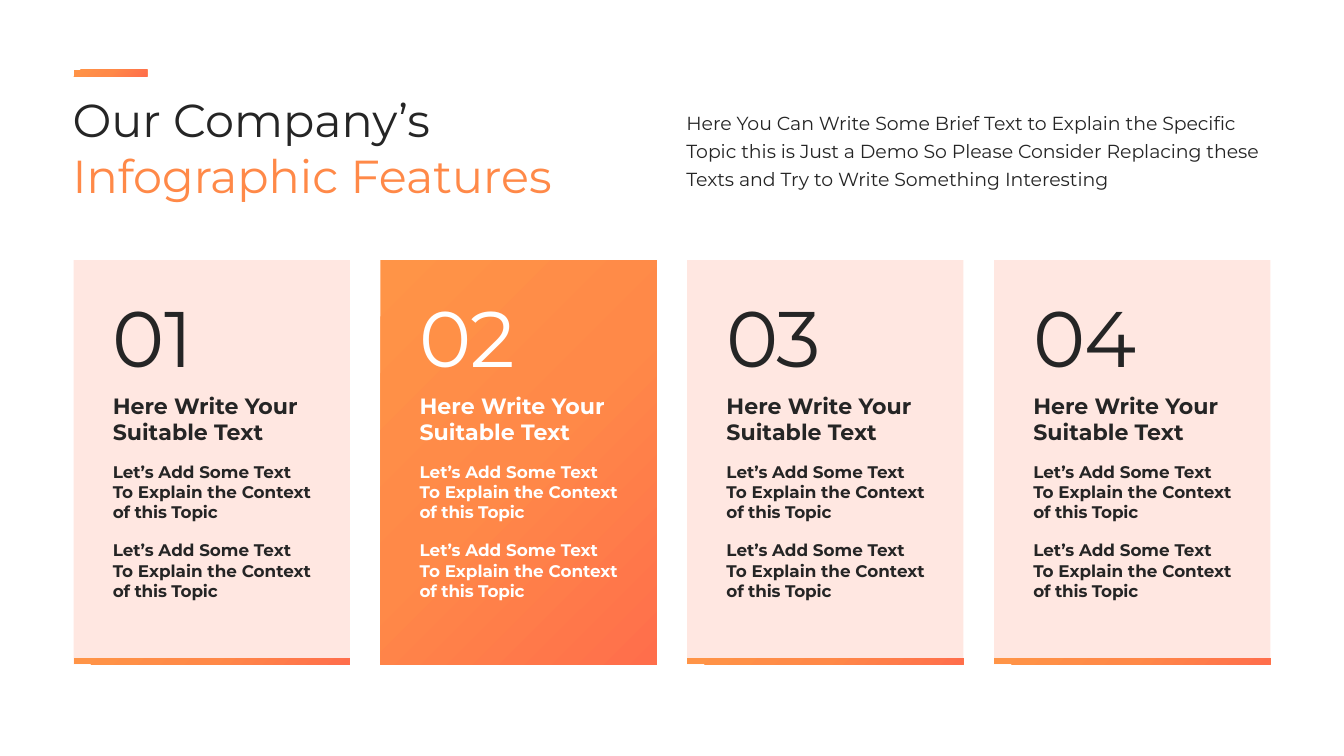
from copy import deepcopy
from pptx import Presentation
from pptx.dml.color import RGBColor
from pptx.enum.shapes import MSO_SHAPE
from pptx.enum.text import MSO_ANCHOR, MSO_AUTO_SIZE, PP_ALIGN
from pptx.oxml.ns import qn
from pptx.util import Inches, Pt

TITLE = ["Our Company’s", "Infographic Features"]
BRIEF = ["Here You Can Write Some Brief Text to Explain the Specific Topic "
         "this is Just a Demo So Please Consider Replacing these Texts and "
         "Try to Write Something Interesting"]
HEAD = ["Here Write Your", "Suitable Text"]
NOTE = ["Let’s Add Some Text", "To Explain the Context", "of this Topic"]
CARDS = [("01", 1.05), ("02", 1.2), ("03", 1.2), ("04", 1.27)]
ACTIVE = "02"
WARM = ["FF9447", "FF8948", "FF6E4B"]
DARK, WHITE, PINK = "252525", "FFFFFF", "FFE7E1"
FONT = "Montserrat"

LEFT, LAST, TOP = 0.73, 9.86, 2.58
WIDE, HIGH, BAR = 2.74, 4.01, 0.06
INSET = 0.29
STEP = (LAST - LEFT) / (len(CARDS) - 1)


def color(code):
    return RGBColor.from_string(code)


def blend(fill, node):
    fill.gradient()
    fill.gradient_angle = 315
    stops = node.find(".//" + qn("a:gsLst"))
    stops.insert(1, deepcopy(stops[0]))
    for i, (stop, code) in enumerate(zip(fill.gradient_stops, WARM)):
        stop.position = i / 2
        stop.color.rgb = color(code)


def block(x, y, w, h, code=None):
    shape = slide.shapes.add_shape(
        MSO_SHAPE.RECTANGLE, Inches(x), Inches(y), Inches(w), Inches(h))
    shape.shadow.inherit = False
    shape.line.fill.background()
    if code:
        shape.fill.solid()
        shape.fill.fore_color.rgb = color(code)
    else:
        blend(shape.fill, shape._element)


def write(box, lines, size, code, bold=False, wrap=False):
    frame = box.text_frame
    frame.text = "\n".join(lines)
    frame.word_wrap = wrap
    frame.auto_size = MSO_AUTO_SIZE.SHAPE_TO_FIT_TEXT
    frame.vertical_anchor = MSO_ANCHOR.TOP
    for para in frame.paragraphs:
        para.alignment = PP_ALIGN.LEFT
        font = para.runs[0].font
        font.name, font.size, font.bold = FONT, Pt(size), bold
        font.color.rgb = color(code)
    return frame.paragraphs


def label(x, y, w, h, *args, **opts):
    box = slide.shapes.add_textbox(Inches(x), Inches(y), Inches(w), Inches(h))
    return write(box, *args, **opts)


def track(para, points):
    para.runs[0]._r.get_or_add_rPr().set("spc", str(round(points * 100)))


deck = Presentation()
deck.slide_width, deck.slide_height = Inches(13.33), Inches(7.5)
slide = deck.slides.add_slide(deck.slide_layouts[5])

title = slide.shapes.title
title.left, title.top = Inches(0.62), Inches(0.86)
title.width, title.height = Inches(5.37), Inches(1.21)
accent = write(title, TITLE, 33, DARK)[1].runs[0]
blend(accent.font.fill, accent._r)
block(LEFT, 0.69, 0.73, 0.07)
brief = label(6.71, 1, 6.12, 0.92, BRIEF, 13.5, DARK, wrap=True)
brief[0].line_spacing = Pt(20)

for i, (num, width) in enumerate(CARDS):
    x = LEFT + i * STEP
    active = num == ACTIVE
    ink = WHITE if active else DARK
    block(x, TOP, WIDE, HIGH, None if active else PINK)
    if not active:
        block(x, TOP + HIGH - BAR, WIDE, BAR)
    x += INSET
    track(label(x, 2.82, width, 1.05, [num], 56.2, ink)[0], -0.6)
    label(x, 3.84, 2.08, 0.63, HEAD, 15.8, ink, bold=True)
    for y in (4.53, 5.31):
        track(label(x, y, 2.21, 0.71, NOTE, 12, ink, bold=True)[-1], -0.1)

deck.save("out.pptx")
